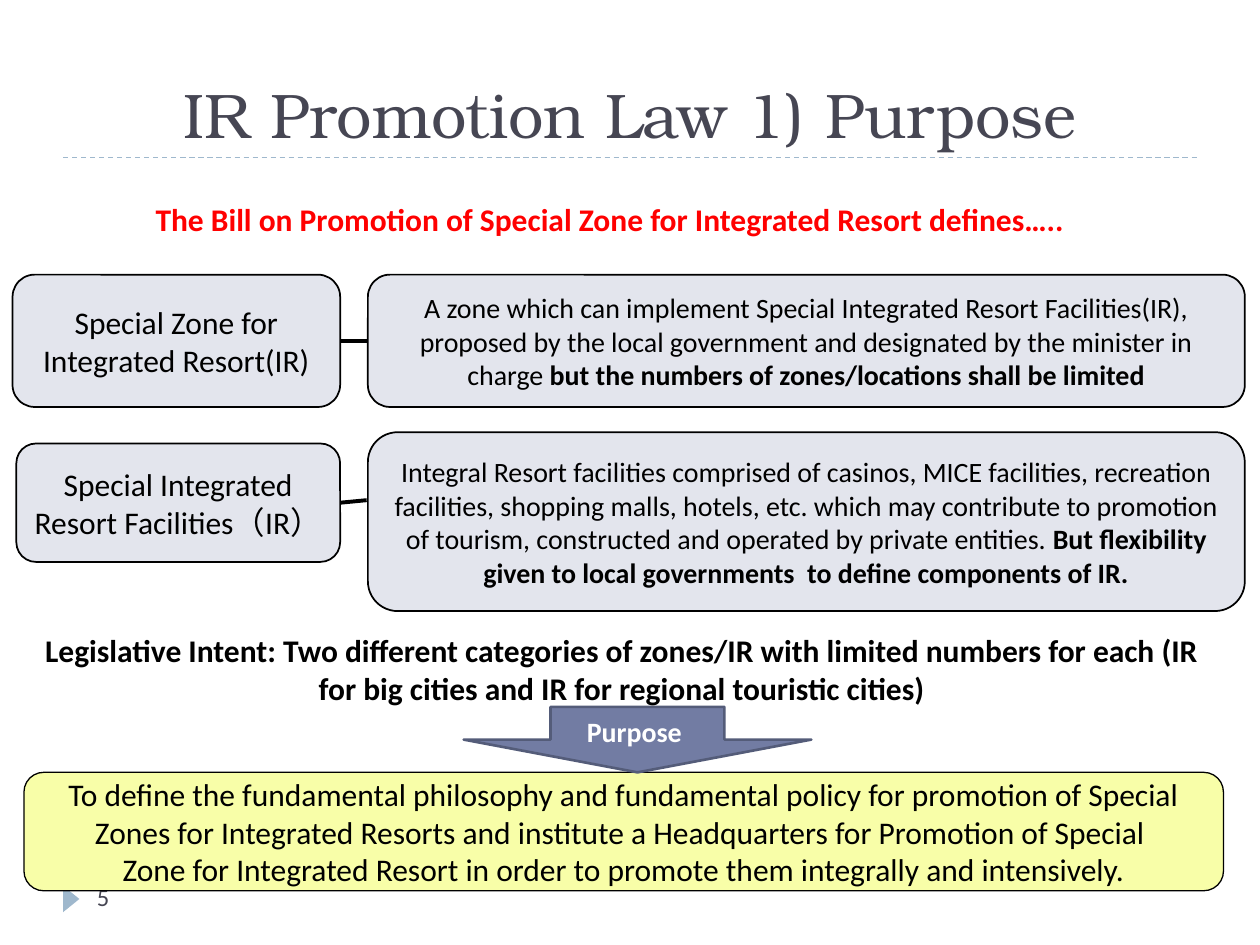
from lxml import etree
from pptx import Presentation
from pptx.dml.color import RGBColor
from pptx.enum.dml import MSO_LINE
from pptx.enum.shapes import MSO_CONNECTOR, MSO_SHAPE
from pptx.enum.text import MSO_ANCHOR, PP_ALIGN
from pptx.oxml.ns import qn
from pptx.util import Inches, Pt

ROUNDED, ARROW, TRIANGLE = MSO_SHAPE.ROUNDED_RECTANGLE, MSO_SHAPE.DOWN_ARROW, MSO_SHAPE.ISOSCELES_TRIANGLE
STRAIGHT = MSO_CONNECTOR.STRAIGHT
DASH = MSO_LINE.DASH
LEFT, CENTER = PP_ALIGN.LEFT, PP_ALIGN.CENTER
TOP, MIDDLE, BOTTOM = MSO_ANCHOR.TOP, MSO_ANCHOR.MIDDLE, MSO_ANCHOR.BOTTOM
LEFT_SIDE, RIGHT_SIDE = 1, 3

WIDTH, HEIGHT = Inches(10), Inches(7.5)
COLUMNS, ROWS = 100, 75
TERM_RIGHT, MEANING_LEFT, MEANING_WIDTH = 27, 29.2, 69.6
BODY_FONT, TITLE_FONT = "Calibri", "TeX Gyre Bonum"
COLORS = {
    "black": "000000", "white": "FFFFFF", "red": "FF0000", "title": "464653",
    "rule": "9FB8CD", "panel": "E3E5ED", "goal": "F8FEA8",
    "arrow": "727CA3", "arrow edge": "545C79",
}


def color(name):
    """Return the named colour."""
    return RGBColor.from_string(COLORS[name])


def grid(left, top, *size):
    """Turn columns and rows of the slide grid into lengths."""
    values = (left, top, *size)
    units = (WIDTH / COLUMNS, HEIGHT / ROWS) * 2
    return [round(value * unit) for value, unit in zip(values, units)]


def write(shape, paragraphs, size, ink="black", bold=False, font=BODY_FONT,
          align=CENTER, anchor=MIDDLE, wrap=True):
    """Write paragraphs, each a list of runs; a run after the first is bold."""
    frame = shape.text_frame
    frame.word_wrap = wrap
    frame.vertical_anchor = anchor
    for index, texts in enumerate(paragraphs):
        paragraph = frame.paragraphs[0] if index == 0 else frame.add_paragraph()
        paragraph.alignment = align
        for position, text in enumerate(texts):
            run = paragraph.add_run()
            run.text = text
            run.font.name = font
            run.font.size = Pt(size)
            run.font.bold = bold or position > 0
            run.font.color.rgb = color(ink)


def add_text(slide, place, text, size, **style):
    """Add a text box with one paragraph."""
    write(slide.shapes.add_textbox(*grid(*place)), [[text]], size, **style)


def add_block(slide, kind, place, fill, edge=None, weight=1):
    """Add a filled preset shape, outlined if an edge colour is given."""
    shape = slide.shapes.add_shape(kind, *grid(*place))
    shape.shadow.inherit = False
    shape.fill.solid()
    shape.fill.fore_color.rgb = color(fill)
    if edge:
        shape.line.color.rgb = color(edge)
        shape.line.width = Pt(weight)
    else:
        shape.line.fill.background()
    return shape


def add_line(slide, start, end, ink, weight):
    """Add a straight connector without a shadow."""
    line = slide.shapes.add_connector(STRAIGHT, *grid(*start), *grid(*end))
    line.line.color.rgb = color(ink)
    line.line.width = Pt(weight)
    etree.SubElement(line._element.spPr, qn("a:effectLst"))
    return line


def add_definition(slide, term, term_place, meaning, meaning_top, meaning_height, line_end=None):
    """Add a term panel, its meaning panel and the line between them."""
    left, top, height = term_place
    term_box = add_block(slide, ROUNDED, (left, top, TERM_RIGHT - left, height), "panel", "black")
    write(term_box, [[term]], 18)
    meaning_box = add_block(
        slide, ROUNDED, (MEANING_LEFT, meaning_top, MEANING_WIDTH, meaning_height), "panel", "black")
    write(meaning_box, [meaning], 16)
    start = (TERM_RIGHT, top + height / 2)
    line = add_line(slide, start, line_end or (MEANING_LEFT, start[1]), "black", 2.25)
    line.begin_connect(term_box, RIGHT_SIDE)
    if line_end is None:
        line.end_connect(meaning_box, LEFT_SIDE)


def add_frame(slide):
    """Add the title, its dashed rule and the page number."""
    add_line(slide, (5, 12.5), (95, 12.5), "rule", 0.75).line.dash_style = DASH
    add_block(slide, TRIANGLE, (4.6, 70.7, 2.1, 1.3), "rule").rotation = 90
    add_text(slide, (5, 2.5, 90, 10), "IR Promotion Law 1) Purpose", 36,
             ink="title", font=TITLE_FONT, anchor=BOTTOM)
    add_text(slide, (6.7, 69.5, 21.7, 4), "5", 14, ink="title", align=LEFT, anchor=TOP)


def add_purpose(slide):
    """Add the purpose panel and the arrow that points to it."""
    goal = add_block(slide, ROUNDED, (1.9, 61.3, 95.2, 9.4), "goal", "black", 0.75)
    write(goal, [
        ["To define the fundamental philosophy and fundamental policy for promotion of Special"],
        ["Zones for Integrated Resorts and institute a Headquarters for Promotion of Special "],
        ["Zone for Integrated Resort in order to promote them integrally and intensively."],
    ], 18, wrap=False)
    arrow = add_block(slide, ARROW, (36.8, 56.1, 27.6, 5.2), "arrow", "arrow edge", 1.5)
    write(arrow, [["Purpose "]], 16, ink="white", bold=True)


def main():
    """Build the slide and save it."""
    presentation = Presentation()
    presentation.slide_width, presentation.slide_height = WIDTH, HEIGHT
    slide = presentation.slides.add_slide(presentation.slide_layouts[6])
    add_frame(slide)
    add_purpose(slide)
    add_definition(
        slide, "Special Integrated Resort Facilities（IR）", (1.3, 35.2, 9.4),
        ["Integral Resort facilities comprised of casinos, MICE facilities, recreation facilities, "
         "shopping malls, hotels, etc. which may contribute to promotion of tourism, constructed "
         "and operated by private entities. ",
         "But flexibility given to local governments  to define components of IR."],
        34.3, 14.2, line_end=(29.1, 39.7))
    add_definition(
        slide, "Special Zone for Integrated Resort(IR)", (1, 21.8, 10.5),
        ["A zone which can implement Special Integrated Resort Facilities(IR), proposed by the "
         "local government and designated by the minister in charge ",
         "but the numbers of zones/locations shall be limited"],
        21.8, 10.5)
    add_text(slide, (1.9, 15.4, 93.6, 4),
             "The Bill on Promotion of Special Zone for Integrated Resort defines….. ",
             18, ink="red", bold=True, anchor=TOP)
    add_text(slide, (1.9, 49.6, 94.9, 7.1),
             "Legislative Intent: Two different categories of zones/IR with limited numbers "
             "for each (IR for big cities and IR for regional touristic cities)",
             18, bold=True, anchor=TOP)
    presentation.save("out.pptx")


if __name__ == "__main__":
    main()
